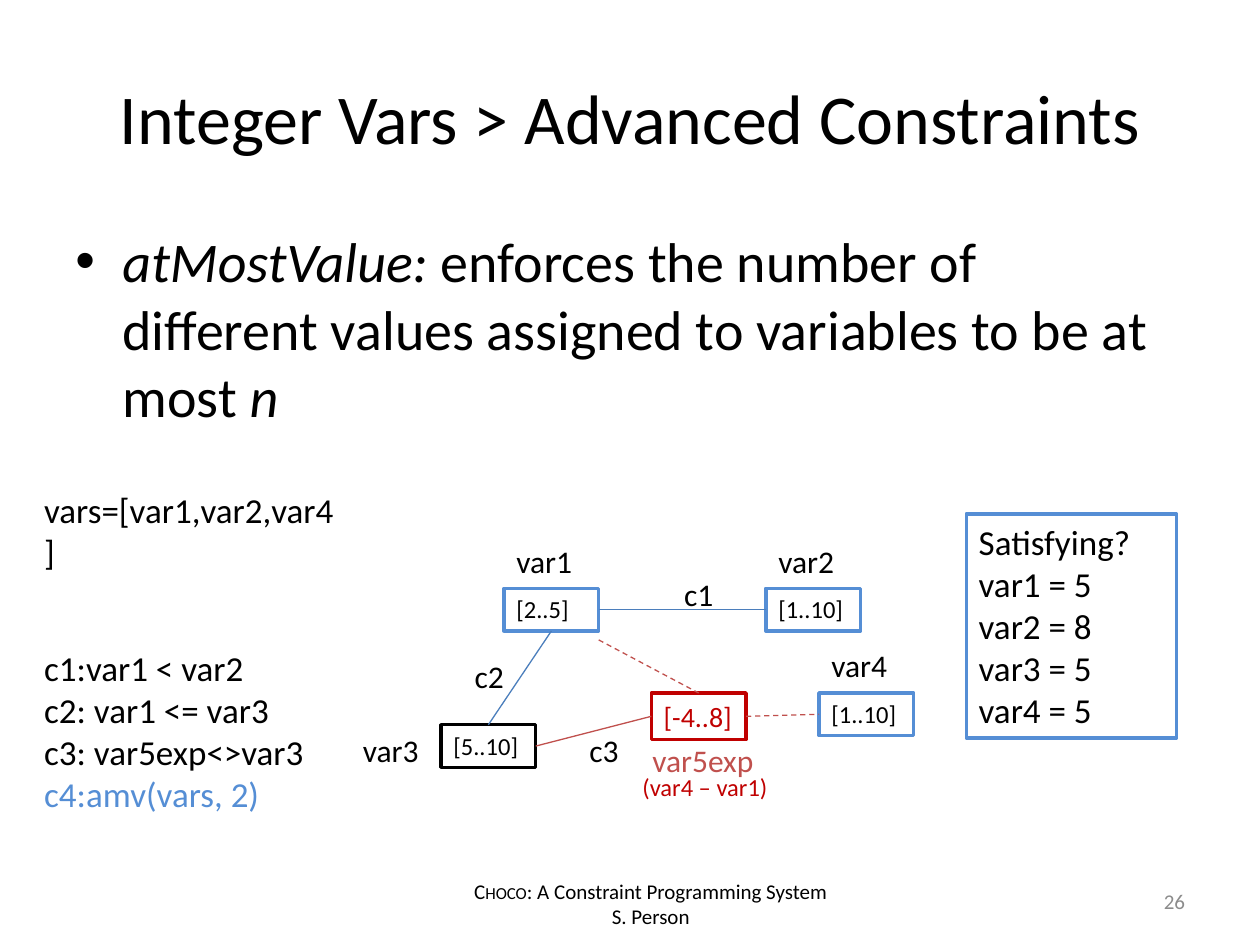
from dataclasses import dataclass
from typing import Optional

from lxml import etree
from pptx import Presentation
from pptx import util as u
from pptx.dml.color import RGBColor
from pptx.enum import dml, shapes, text
from pptx.oxml.ns import qn


@dataclass(frozen=True)
class Theme:
    font: str = "Calibri"
    black: str = "000000"
    white: str = "FFFFFF"
    grey: str = "8C8C8C"
    blue: str = "558ED5"
    blue_line: str = "4B7EBC"
    red: str = "C00000"
    soft_red: str = "C0504D"
    title: int = 40
    body: int = 32
    listing: int = 20
    label: int = 18
    expression: int = 16
    domain: int = 14
    footer: int = 12
    box_line: float = 2
    link_line: float = 0.75


T = Theme()
LEFT, CENTER, RIGHT = text.PP_ALIGN.LEFT, text.PP_ALIGN.CENTER, text.PP_ALIGN.RIGHT
TOP, MIDDLE = text.MSO_ANCHOR.TOP, text.MSO_ANCHOR.MIDDLE
SIDE_TOP, SIDE_LEFT, SIDE_BOTTOM, SIDE_RIGHT = range(4)


@dataclass(frozen=True)
class Block:
    text: str
    x: float
    y: float
    w: float = 1.91
    h: float = 1.02
    size: int = T.label
    color: str = T.black
    align: text.PP_ALIGN = LEFT
    anchor: text.MSO_ANCHOR = TOP
    border: Optional[str] = None


@dataclass(frozen=True)
class Link:
    start: str
    start_side: int
    end: str
    end_side: int
    color: str


def style_run(r, size: int, color: str) -> None:
    r.font.name = T.font
    r.font.size = u.Pt(size)
    r.font.color.rgb = RGBColor.from_string(color)


def draw_block(s, b: Block):
    area = [u.Cm(v) for v in (b.x, b.y, b.w, b.h)]
    if b.border:
        sp = s.shapes.add_shape(shapes.MSO_SHAPE.RECTANGLE, *area)
        sp.shadow.inherit = False
        sp.fill.solid()
        sp.fill.fore_color.rgb = RGBColor.from_string(T.white)
        sp.line.color.rgb = RGBColor.from_string(b.border)
        sp.line.width = u.Pt(T.box_line)
    else:
        sp = s.shapes.add_textbox(*area)
    tf = sp.text_frame
    tf.word_wrap = True
    tf.vertical_anchor = b.anchor
    tf.text = b.text
    for p in tf.paragraphs:
        p.alignment = b.align
        for r in p.runs:
            style_run(r, b.size, b.color)
    return sp


def draw_line(s, x1: float, y1: float, x2: float, y2: float, color: str, dashed: bool = False):
    line = s.shapes.add_connector(
        shapes.MSO_CONNECTOR.STRAIGHT, u.Cm(x1), u.Cm(y1), u.Cm(x2), u.Cm(y2))
    line.line.color.rgb = RGBColor.from_string(color)
    line.line.width = u.Pt(T.link_line)
    if dashed:
        line.line.dash_style = dml.MSO_LINE.DASH
    etree.SubElement(line._element.spPr, qn("a:effectLst"))
    return line


def draw_link(s, link: Link, boxes: dict, dashed: bool = False) -> None:
    line = draw_line(s, 0, 0, 1, 1, link.color, dashed)
    line.begin_connect(boxes[link.start], link.start_side)
    line.end_connect(boxes[link.end], link.end_side)


def draw_definition(s) -> None:
    sp = draw_block(s, Block("", 1.27, 4.45, 22.86, 4.45))
    p = sp.text_frame.paragraphs[0]
    parts = (
        ("atMostValue: ", True),
        ("enforces the number of different values assigned to variables to be at most ", False),
        ("n", True),
    )
    for words, italic in parts:
        r = p.add_run()
        r.text = words
        style_run(r, T.body, T.black)
        r.font.italic = italic
    pPr = p._p.get_or_add_pPr()
    pPr.set("marL", str(u.Cm(0.95)))
    pPr.set("indent", str(u.Cm(-0.95)))
    etree.SubElement(pPr, qn("a:buFont"), typeface="Arial")
    etree.SubElement(pPr, qn("a:buChar"), char="•")


def draw_footer(s) -> None:
    sp = draw_block(s, Block("Choco\nS. Person", 8.89, 17.58, 8.46, 1.27, T.footer, align=CENTER))
    p = sp.text_frame.paragraphs[0]
    p.runs[0].font._element.set("cap", "small")
    r = p.add_run()
    r.text = ": A Constraint Programming System"
    style_run(r, T.footer, T.black)


CONSTRAINTS = "c1:var1 < var2\nc2: var1 <= var3\nc3: var5exp<>var3\nc4:amv(vars, 2)"
ASSIGNMENT = "Satisfying?\nvar1 = 5\nvar2 = 8\nvar3 = 5\nvar4 = 5"

BOXES = {
    "var4": Block("[1..10]", 16.51, 13.97, h=0.86, size=T.domain, border=T.blue),
    "var1": Block("[2..5]", 10.16, 11.86, h=0.86, size=T.domain, border=T.blue),
    "var3": Block("[5..10]", 8.89, 14.61, h=0.86, size=T.domain, border=T.black),
    "var2": Block("[1..10]", 15.44, 11.86, h=0.86, size=T.domain, border=T.blue),
    "var5exp": Block("[-4..8]", 13.13, 13.97, h=0.94, size=T.expression,
                     color=T.red, border=T.red),
}
SOLID_LINKS = (
    Link("var1", SIDE_RIGHT, "var2", SIDE_LEFT, T.blue_line),
    Link("var1", SIDE_BOTTOM, "var3", SIDE_TOP, T.blue_line),
    Link("var3", SIDE_RIGHT, "var5exp", SIDE_LEFT, T.soft_red),
)
DASHED_LINK = Link("var5exp", SIDE_RIGHT, "var4", SIDE_LEFT, T.soft_red)
LABELS = (
    Block("c1", 13.54, 11.46, 1.27),
    Block("c2", 9.32, 13.13, 1.27),
    Block("c3", 11.63, 14.61, 1.27),
    Block("var1", 10.16, 10.8),
    Block("var2", 15.44, 10.8),
    Block("var3", 6.78, 14.61, align=RIGHT),
    Block("var4", 16.51, 12.9),
    Block("var5exp", 12.9, 14.81, 2.74, color=T.soft_red),
    Block("(var4 – var1)", 12.7, 15.44, 3.18, 0.86, T.domain, T.red),
)


def main() -> None:
    prs = Presentation()
    prs.slide_width, prs.slide_height = u.Cm(25.4), u.Cm(19.05)
    s = prs.slides.add_slide(prs.slide_layouts[6])

    draw_footer(s)
    draw_block(s, Block("Integer Vars > Advanced Constraints", 1.27, 0.76, 22.86, 3.18,
                        T.title, align=CENTER, anchor=MIDDLE))
    draw_definition(s)
    draw_block(s, Block("26", 18.21, 17.65, 5.93, 1.02, T.footer, T.grey, RIGHT, MIDDLE))

    constraints = draw_block(s, Block(CONSTRAINTS, 0.64, 12.9, 6.35, 3.68, T.listing))
    style_run(constraints.text_frame.paragraphs[-1].runs[0], T.listing, T.blue)
    draw_block(s, Block(ASSIGNMENT, 19.48, 10.36, 4.24, 4.52, T.listing, border=T.blue))
    draw_block(s, Block("vars=[var1,var2,var4]", 0.64, 9.73, 6.55, 1.12, T.listing))

    boxes = {name: draw_block(s, box) for name, box in BOXES.items()}
    for link in SOLID_LINKS:
        draw_link(s, link, boxes)
    draw_link(s, DASHED_LINK, boxes, dashed=True)
    to_expression = draw_line(s, 12.07, 12.9, 14.08, 13.97, T.soft_red, dashed=True)
    to_expression.end_connect(boxes["var5exp"], SIDE_TOP)
    for label in LABELS:
        draw_block(s, label)

    prs.save("out.pptx")


if __name__ == "__main__":
    main()
